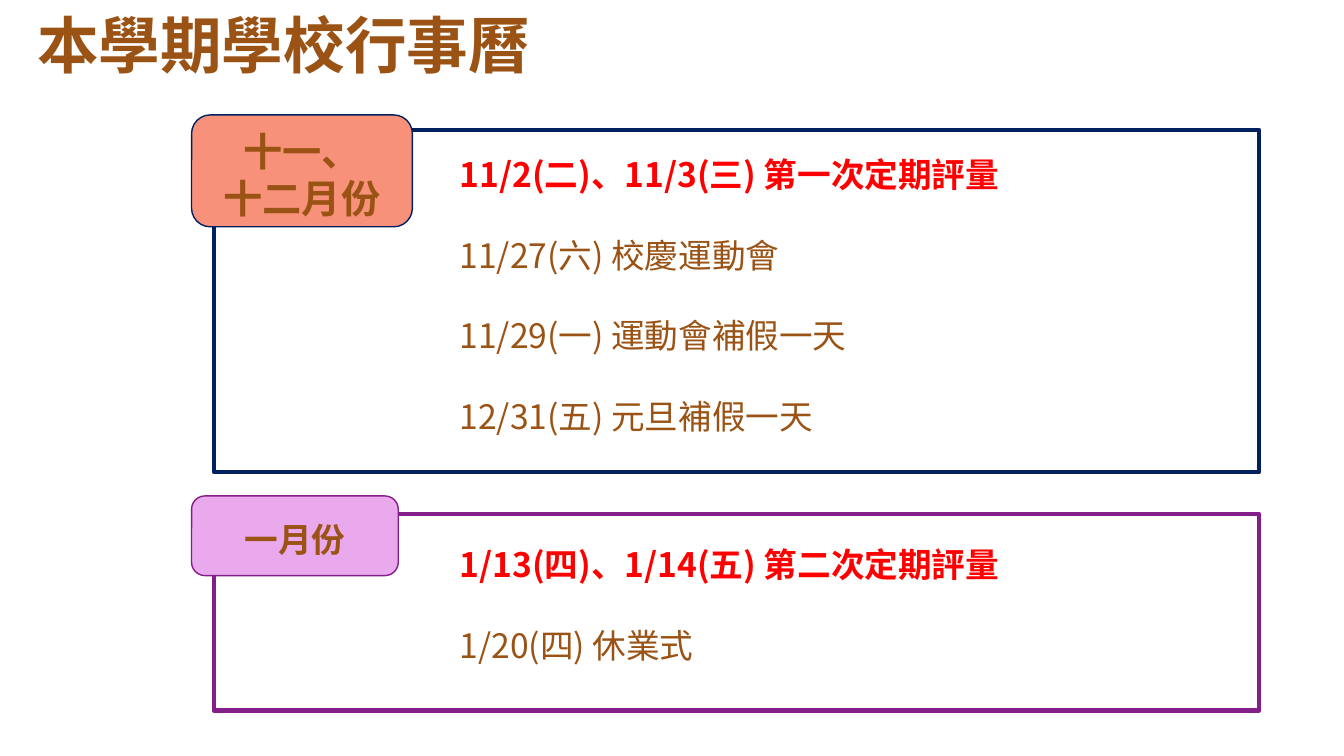
from dataclasses import dataclass

from lxml import etree
from pptx import Presentation
from pptx.dml.color import RGBColor
from pptx.enum.shapes import MSO_SHAPE
from pptx.enum.text import MSO_ANCHOR, PP_ALIGN
from pptx.oxml.ns import qn
from pptx.util import Inches, Pt

RECTANGLE = MSO_SHAPE.RECTANGLE
ROUNDED = MSO_SHAPE.ROUNDED_RECTANGLE
TOP, MIDDLE = MSO_ANCHOR.TOP, MSO_ANCHOR.MIDDLE
LEFT, CENTER = PP_ALIGN.LEFT, PP_ALIGN.CENTER


@dataclass(frozen=True)
class Theme:
    font: str = "Noto Sans CJK SC"
    text: str = "9A5315"
    exam: str = "FF0000"
    navy: str = "002060"
    salmon: str = "F79179"
    purple: str = "841E89"
    lilac: str = "E9A9EC"
    title_size: int = 44
    large_size: int = 28
    body_size: int = 24
    line_ratio: float = 1.2


def add_text(para, text, *, theme, size, color, bold=False, align=LEFT, before=0):
    """Fill a paragraph, with a fixed line height in proportion to its size."""
    para.alignment = align
    para.line_spacing = Pt(size * theme.line_ratio)
    para.space_before = Pt(before)
    span = para.add_run()
    span.text = text
    span.font.name = theme.font
    span.font.size = Pt(size)
    span.font.bold = bold
    span.font.color.rgb = RGBColor.from_string(color)
    east_asian = etree.SubElement(span.font._element, qn("a:ea"))
    east_asian.set("typeface", theme.font)


class CalendarPage:
    """Holds the theme and the slide being filled."""

    def __init__(self, page, theme):
        self.page = page
        self.theme = theme

    def fill_text(self, box, lines, anchor=TOP, gap=0, **style):
        """Set (text, color, bold) lines, one paragraph each."""
        frame = box.text_frame
        frame.word_wrap = True
        frame.vertical_anchor = anchor
        for index, (text, color, bold) in enumerate(lines):
            para = frame.add_paragraph() if index else frame.paragraphs[0]
            add_text(para, text, theme=self.theme, color=color, bold=bold,
                     before=gap if index else 0, **style)
        return frame

    def text_box(self, place, lines, **style):
        box = self.page.shapes.add_textbox(*map(Inches, place))
        self.fill_text(box, lines, **style)

    def shape(self, kind, place, line, width, fill=None):
        box = self.page.shapes.add_shape(kind, *map(Inches, place))
        box.shadow.inherit = False
        box.line.color.rgb = RGBColor.from_string(line)
        box.line.width = Pt(width)
        if fill:
            box.fill.solid()
            box.fill.fore_color.rgb = RGBColor.from_string(fill)
        else:
            box.fill.background()
        return box

    def title(self, text):
        self.text_box((0.27, 0.02, 8.62, 0.83), [(text, self.theme.text, True)],
                      size=self.theme.title_size)

    def label(self, place, lines, line, fill, size):
        box = self.shape(ROUNDED, place, line, 1, fill)
        lines = [(text, self.theme.text, True) for text in lines]
        frame = self.fill_text(box, lines, anchor=MIDDLE, size=size, align=CENTER)
        frame.margin_top = Inches(0.11)

    def events(self, top, height, exam, others):
        """List the exam in bold red, then the other dates of the months."""
        theme = self.theme
        lines = [(exam, theme.exam, True)]
        lines += [(text, theme.text, False) for text in others]
        self.text_box((4.46, top, 7.9, height), lines, size=theme.body_size,
                      gap=theme.body_size * theme.line_ratio)


def main():
    deck = Presentation()
    deck.slide_width, deck.slide_height = Inches(13.33), Inches(7.5)
    theme = Theme()
    calendar = CalendarPage(deck.slides.add_slide(deck.slide_layouts[6]), theme)

    calendar.title("本學期學校行事曆")

    calendar.shape(RECTANGLE, (2.12, 1.29, 10.37, 3.39), theme.navy, 3)
    calendar.label((1.9, 1.14, 2.19, 1.11), ["十一、", "十二月份"],
                   theme.navy, theme.salmon, theme.large_size)
    calendar.events(1.48, 2.93, "11/2(二)、11/3(三) 第一次定期評量",
                    ["11/27(六) 校慶運動會", "11/29(一) 運動會補假一天",
                     "12/31(五) 元旦補假一天"])

    calendar.shape(RECTANGLE, (2.12, 5.1, 10.37, 1.95), theme.purple, 3)
    calendar.label((1.9, 4.92, 2.05, 0.79), ["一月份"],
                   theme.purple, theme.lilac, theme.body_size)
    calendar.events(5.35, 1.31, "1/13(四)、1/14(五) 第二次定期評量",
                    ["1/20(四) 休業式"])

    deck.save("out.pptx")


if __name__ == "__main__":
    main()
